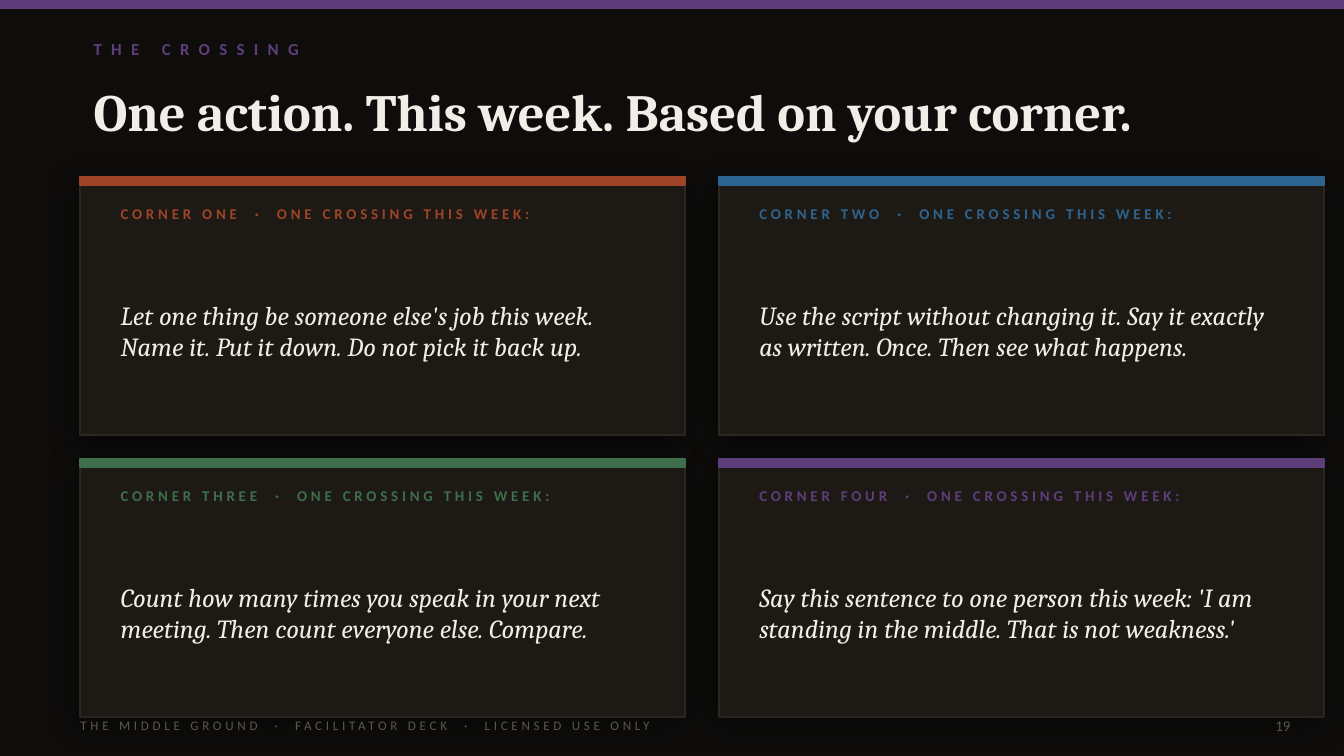
import pptx
import pptx.dml.color
import pptx.enum.shapes
import pptx.enum.text
import pptx.oxml
import pptx.oxml.ns
import pptx.util

Cm = pptx.util.Cm
Pt = pptx.util.Pt
RGBColor = pptx.dml.color.RGBColor
ALIGN = pptx.enum.text.PP_ALIGN

NIGHT = RGBColor(0x0E, 0x0D, 0x0C)
PANEL = RGBColor(0x1D, 0x1A, 0x15)
EDGE = RGBColor(0x2A, 0x26, 0x20)
CREAM = RGBColor(0xF2, 0xED, 0xE6)
MUTED = RGBColor(0x5C, 0x56, 0x4E)
RUST = RGBColor(0x9E, 0x44, 0x28)
BLUE = RGBColor(0x2E, 0x64, 0x90)
GREEN = RGBColor(0x3E, 0x6E, 0x4A)
PURPLE = RGBColor(0x5E, 0x3E, 0x7A)

WIDE, HIGH = 25.4, 14.29
BAND = 0.15

CARDS = [
    ("ONE", RUST, "Let one thing be someone else's job this week. "
     "Name it. Put it down. Do not pick it back up."),
    ("TWO", BLUE, "Use the script without changing it. "
     "Say it exactly as written. Once. Then see what happens."),
    ("THREE", GREEN, "Count how many times you speak in your next meeting. "
     "Then count everyone else. Compare."),
    ("FOUR", PURPLE, "Say this sentence to one person this week: "
     "'I am standing in the middle. That is not weakness.'"),
]


def add_text(slide, text, box, size, color, font="Calibri", bold=False,
             italic=False, track=0, align=ALIGN.LEFT):
    """Place one line or paragraph; track is letter spacing in points."""
    frame = slide.shapes.add_textbox(*map(Cm, box)).text_frame
    frame.word_wrap = True
    frame.vertical_anchor = pptx.enum.text.MSO_ANCHOR.MIDDLE
    para = frame.paragraphs[0]
    para.alignment = align
    run = para.add_run()
    run.text = text
    run.font.name = font
    run.font.size = Pt(size)
    run.font.bold = bold
    run.font.italic = italic
    run.font.color.rgb = color
    if track:
        run.font._element.set("spc", str(track * 100))


def add_rect(slide, box, fill, line):
    rect = slide.shapes.add_shape(
        pptx.enum.shapes.MSO_SHAPE.RECTANGLE, *map(Cm, box))
    rect.shadow.inherit = False
    rect.fill.solid()
    rect.fill.fore_color.rgb = fill
    rect.line.color.rgb = line
    rect.line.width = Pt(1)
    return rect


def add_glow(shape):
    """Give the shape a soft black shadow towards the lower left."""
    effects = shape._element.spPr.find(pptx.oxml.ns.qn("a:effectLst"))
    effects.append(pptx.oxml.parse_xml(
        f'<a:outerShdw {pptx.oxml.ns.nsdecls("a")} blurRad="{Pt(14)}" '
        f'dist="{Pt(4)}" dir="{135 * 60000}" algn="bl" rotWithShape="0">'
        '<a:srgbClr val="000000"><a:alpha val="50000"/></a:srgbClr>'
        '</a:outerShdw>'))


def add_head(slide, left, top, width):
    add_text(slide, "THE CROSSING", (left, top, width, 0.81), 9, PURPLE,
             bold=True, track=5)
    add_text(slide, "One action. This week. Based on your corner.",
             (left, top + 0.89, width, 1.4), 28, CREAM, font="Cambria",
             bold=True)


def add_card(slide, left, top, width, height, name, color, action):
    add_glow(add_rect(slide, (left, top, width, height), PANEL, EDGE))
    add_rect(slide, (left, top, width, BAND), color, color)
    # Label and action share the same side margins
    inner, span = left + 0.51, width - 1.02
    add_text(slide, f"CORNER {name}  ·  ONE CROSSING THIS WEEK:",
             (inner, top + 0.36, span, 0.64), 8, color, bold=True, track=2)
    add_text(slide, action, (inner, top + 1.27, span, height - 1.63), 14,
             CREAM, font="Cambria", italic=True)


def add_grid(slide, left, top, width, height, gap_x, gap_y):
    wide, high = (width - gap_x) / 2, (height - gap_y) / 2
    for i, card in enumerate(CARDS):
        row, col = divmod(i, 2)
        add_card(slide, left + col * (wide + gap_x),
                 top + row * (high + gap_y), wide, high, *card)


def add_foot(slide, left, top, width, height):
    add_text(slide,
             "THE MIDDLE GROUND  ·  FACILITATOR DECK  ·  LICENSED USE ONLY",
             (left, top, 19.05, height), 7, MUTED, track=2)
    page = 1.52
    add_text(slide, "19", (left + width - page, top, page, height), 8, MUTED,
             align=ALIGN.RIGHT)


def main():
    deck = pptx.Presentation()
    deck.slide_width, deck.slide_height = Cm(WIDE), Cm(HIGH)
    slide = deck.slides.add_slide(deck.slide_layouts[6])
    slide.background.fill.solid()
    slide.background.fill.fore_color.rgb = NIGHT

    # Top band, heading, four cards, footer
    add_rect(slide, (0, 0, WIDE, BAND), PURPLE, PURPLE)
    add_head(slide, 1.52, 0.51, 22.35)
    add_grid(slide, 1.52, 3.35, 23.5, 10.21, 0.64, 0.46)
    add_foot(slide, 1.27, 13.46, 23.37, 0.51)
    deck.save("out.pptx")


if __name__ == "__main__":
    main()
